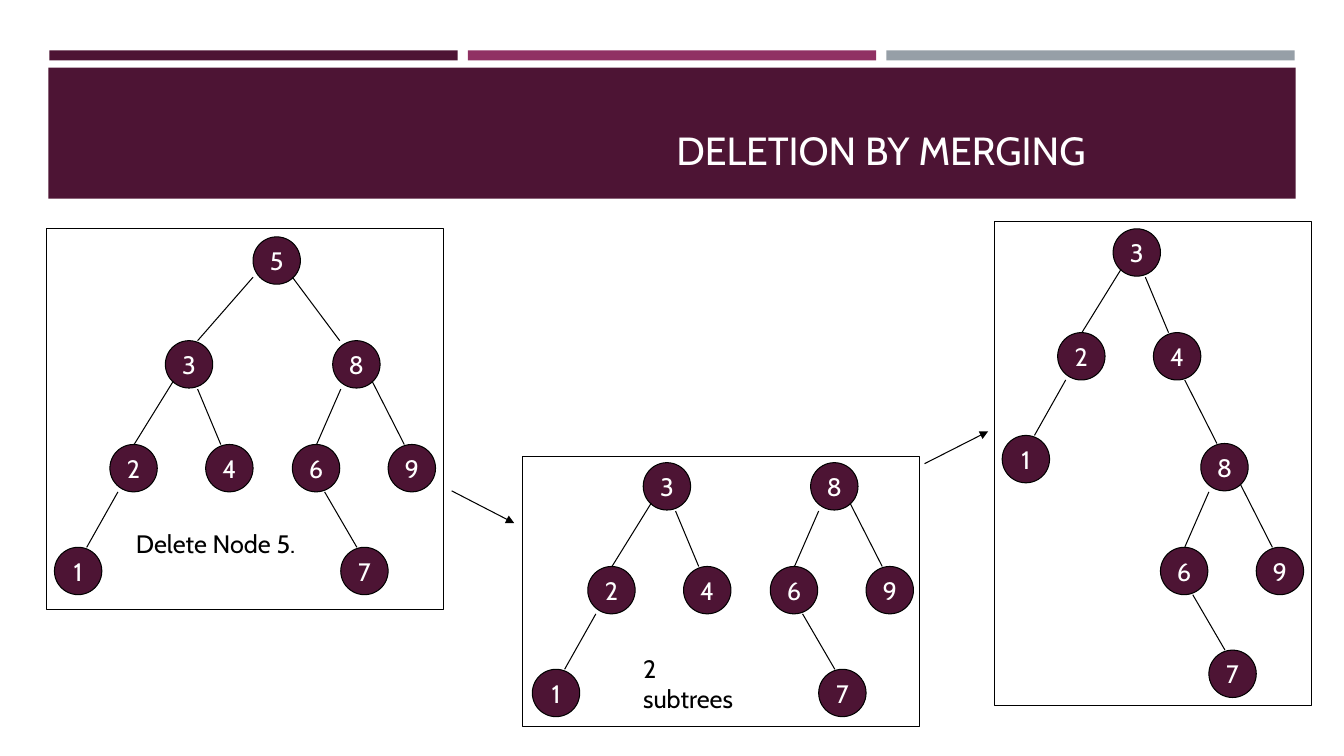
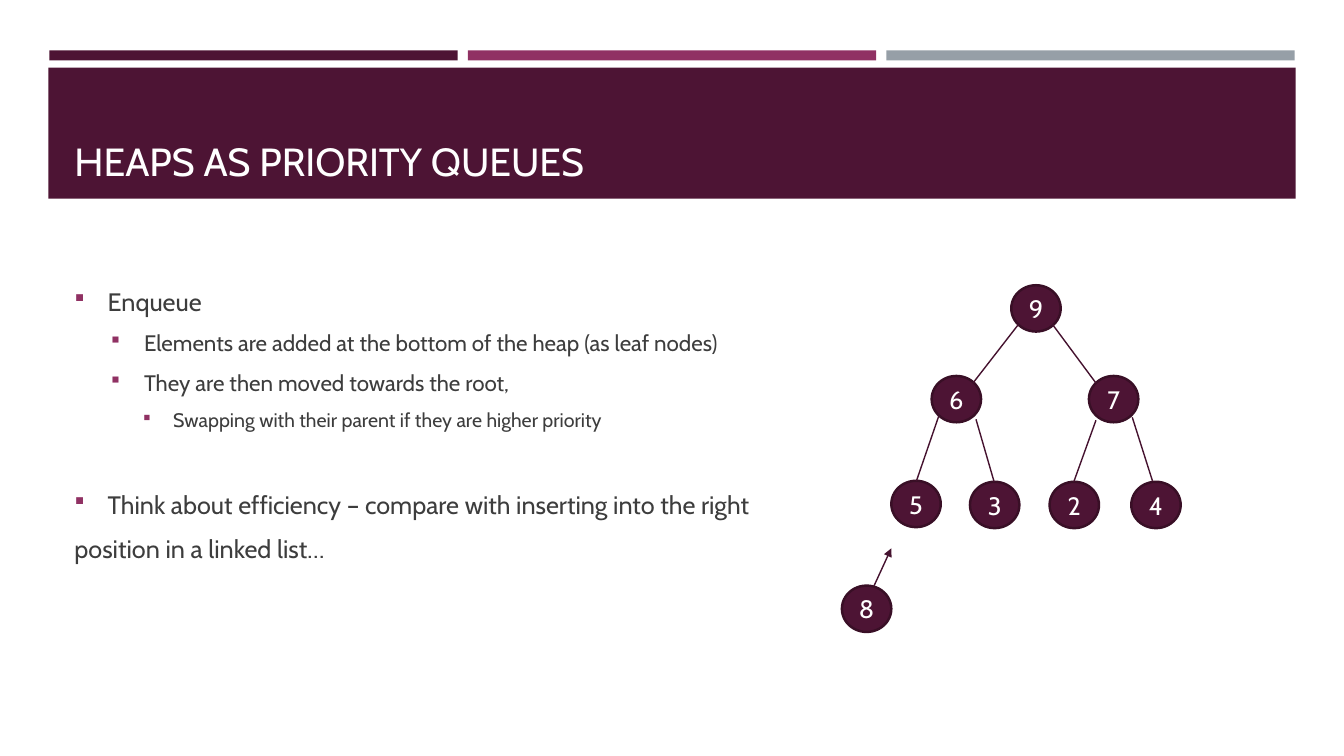
from dataclasses import dataclass

from lxml import etree
from pptx import Presentation
from pptx.dml.color import RGBColor
from pptx.enum.shapes import MSO_CONNECTOR, MSO_SHAPE
from pptx.enum.text import MSO_ANCHOR, PP_ALIGN
from pptx.oxml.ns import qn
from pptx.util import Emu, Pt

RECT, OVAL = MSO_SHAPE.RECTANGLE, MSO_SHAPE.OVAL
LINE = MSO_CONNECTOR.STRAIGHT
TOP, MIDDLE, BOTTOM = MSO_ANCHOR.TOP, MSO_ANCHOR.MIDDLE, MSO_ANCHOR.BOTTOM
LEFT, CENTER = PP_ALIGN.LEFT, PP_ALIGN.CENTER
SCALE = 9144  # EMU in one px, 100 px to the inch


@dataclass(frozen=True)
class Theme:
    font: str = "Cabin"
    plum: str = "4D1434"
    rose: str = "903163"
    gray: str = "969FA7"
    rim: str = "390F26"
    edge: str = "45122F"
    ink: str = "3D3D3D"
    black: str = "000000"
    white: str = "FFFFFF"
    title: int = 28
    text: int = 18
    levels: tuple = (18, 16, 14)
    indents: tuple = (33, 69, 98)
    hangs: tuple = (33, 33, 30)


@dataclass(frozen=True)
class Look:
    """Size and outline of the nodes and edges in a tree."""
    wide: int
    high: int
    rim: str
    rim_pt: float
    edge: str
    edge_pt: float


THEME = Theme()
PLAIN = Look(47, 47, THEME.black, 0.75, THEME.black, 0.75)
BOLD = Look(49, 46, THEME.rim, 1.75, THEME.edge, 1)

# Each tree part: nodes as label -> (x, y), edges as (x1, y1, x2, y2),
# all measured from the corner of its root node.
ROOT = ({"5": (0, 0)}, [(0, 40, -55, 103), (39, 40, 86, 103)])
LOW = (
    {"3": (0, 0), "2": (-55, 103), "4": (40, 103), "1": (-110, 205)},
    [(8, 40, -31, 103), (32, 48, 55, 103), (-47, 150, -78, 205)],
)
HIGH = (
    {"8": (0, 0), "6": (-40, 103), "9": (55, 103), "7": (8, 205)},
    [(8, 48, -16, 103), (39, 40, 71, 103), (-8, 150, 24, 205)],
)
HEAP = (
    {"9": (0, 0), "6": (-79, 90), "7": (77, 90), "5": (-119, 194),
     "3": (-41, 195), "2": (38, 195), "4": (119, 195), "8": (-168, 298)},
    [(7, 39, -38, 97), (41, 39, 84, 97), (-72, 130, -94, 194),
     (-35, 133, -17, 195), (84, 134, 62, 195), (120, 131, 140, 194)],
)

# Level (None has no bullet), space before in points, text
POINTS = [
    (0, 0, "Enqueue"),
    (1, 3.2, "Elements are added at the bottom of the heap (as leaf nodes)"),
    (1, 3.2, "They are then moved towards the root,"),
    (2, 2.8, "Swapping with their parent if they are higher priority"),
    (0, 35, "Think about efficiency – compare with inserting into the right"),
    (None, 3.6, "position in a linked list…"),
]


def px(*nums):
    return [Emu(n * SCALE) for n in nums]


def apply(item, values):
    for key, value in values.items():
        setattr(item, key, value)


def rgb(code):
    return RGBColor.from_string(code)


class Deck:
    def __init__(self, theme):
        self.theme = theme
        self.file = Presentation()
        apply(self.file, {"slide_width": Emu(1333 * SCALE),
                          "slide_height": Emu(750 * SCALE)})
        self.slide = None

    def start(self, title, box):
        """Add a slide with the shared bands and a title."""
        t = self.theme
        self.slide = self.file.slides.add_slide(self.file.slide_layouts[6])
        for i, color in enumerate((t.plum, t.rose, t.gray)):
            self.shape(RECT, (49 + 415 * i, 50, 405, 10), color)
        self.shape(RECT, (48, 67, 1237, 130), t.plum)
        self.label(title, box, t.title, t.white, BOTTOM)

    def shape(self, kind, box, fill=None, line=None, weight=0.75):
        item = self.slide.shapes.add_shape(kind, *px(*box))
        item.shadow.inherit = False
        if fill:
            item.fill.solid()
            item.fill.fore_color.rgb = rgb(fill)
        else:
            item.fill.background()
        if line:
            item.line.color.rgb = rgb(line)
            item.line.width = Pt(weight)
        else:
            item.line.fill.background()
        return item

    def put(self, para, text, size, color):
        run = para.add_run()
        run.text = text
        apply(run.font, {"name": self.theme.font, "size": Pt(size)})
        run.font.color.rgb = rgb(color)

    def frame(self, box, anchor):
        frame = self.slide.shapes.add_textbox(*px(*box)).text_frame
        apply(frame, {"word_wrap": True, "vertical_anchor": anchor})
        return frame

    def label(self, text, box, size, color, anchor=TOP):
        para = self.frame(box, anchor).paragraphs[0]
        para.alignment = LEFT
        self.put(para, text, size, color)

    def node(self, text, x, y, look):
        t = self.theme
        item = self.shape(OVAL, (x, y, look.wide, look.high),
                          t.plum, look.rim, look.rim_pt)
        frame = item.text_frame
        apply(frame, {"word_wrap": False, "vertical_anchor": MIDDLE,
                      "margin_left": 0, "margin_right": 0,
                      "margin_top": 0, "margin_bottom": 0})
        frame.paragraphs[0].alignment = CENTER
        self.put(frame.paragraphs[0], text, t.text, t.white)

    def line(self, ends, look, arrow=False):
        item = self.slide.shapes.add_connector(LINE, *px(*ends))
        item.line.color.rgb = rgb(look.edge)
        item.line.width = Pt(look.edge_pt)
        props = item._element.spPr
        if arrow:
            tail = etree.SubElement(props.find(qn("a:ln")), qn("a:tailEnd"))
            tail.set("type", "triangle")
        etree.SubElement(props, qn("a:effectLst"))

    def tree(self, part, x, y, look):
        nodes, edges = part
        for text, (dx, dy) in nodes.items():
            self.node(text, x + dx, y + dy, look)
        for x1, y1, x2, y2 in edges:
            self.line((x + x1, y + y1, x + x2, y + y2), look)

    def bullet(self, para, level):
        t = self.theme
        props = para._p.get_or_add_pPr()
        props.set("marL", str(t.indents[level] * SCALE))
        props.set("indent", str(-t.hangs[level] * SCALE))
        color = etree.SubElement(props, qn("a:buClr"))
        etree.SubElement(color, qn("a:srgbClr")).set("val", t.rose)
        for tag, key, value in (("a:buSzPct", "val", "92000"),
                                ("a:buFont", "typeface", "Wingdings"),
                                ("a:buChar", "char", "§")):
            etree.SubElement(props, qn(tag)).set(key, value)

    def points(self, rows, box):
        t = self.theme
        frame = self.frame(box, TOP)
        for i, (level, before, text) in enumerate(rows):
            para = frame.add_paragraph() if i else frame.paragraphs[0]
            apply(para, {"alignment": LEFT, "level": level or 0,
                         "space_before": Pt(before), "space_after": Pt(6)})
            if level is not None:
                self.bullet(para, level)
            self.put(para, text, t.levels[level or 0], t.ink)


def merging(deck):
    t = deck.theme
    deck.start("DELETION BY MERGING", (661, 52, 662, 125))
    for part, x, y in ((ROOT, 251, 235), (LOW, 164, 338), (HIGH, 330, 338),
                       (LOW, 638, 459), (HIGH, 804, 459),
                       (LOW, 1104, 227), (HIGH, 1191, 440)):
        deck.tree(part, x, y, PLAIN)
    deck.line((1175, 377, 1207, 440), PLAIN)
    for box in ((46, 227, 394, 378), (518, 453, 394, 268),
                (986, 220, 315, 480)):
        deck.shape(RECT, box, line=t.black)
    deck.label("Delete Node 5.", (125, 519, 187, 40), t.text, t.black)
    deck.label("2 subtrees", (628, 643, 115, 70), t.text, t.black)
    for ends in ((448, 487, 510, 519), (917, 460, 980, 428)):
        deck.line(ends, PLAIN, arrow=True)


def heaps(deck):
    deck.start("HEAPS AS PRIORITY QUEUES", (64, 77, 1206, 111))
    deck.points(POINTS, (64, 279, 1206, 320))
    deck.tree(HEAP, 1003, 283, BOLD)
    deck.line((867, 581, 884, 544), BOLD, arrow=True)


def main():
    deck = Deck(THEME)
    merging(deck)
    heaps(deck)
    deck.file.save("out.pptx")


if __name__ == "__main__":
    main()
